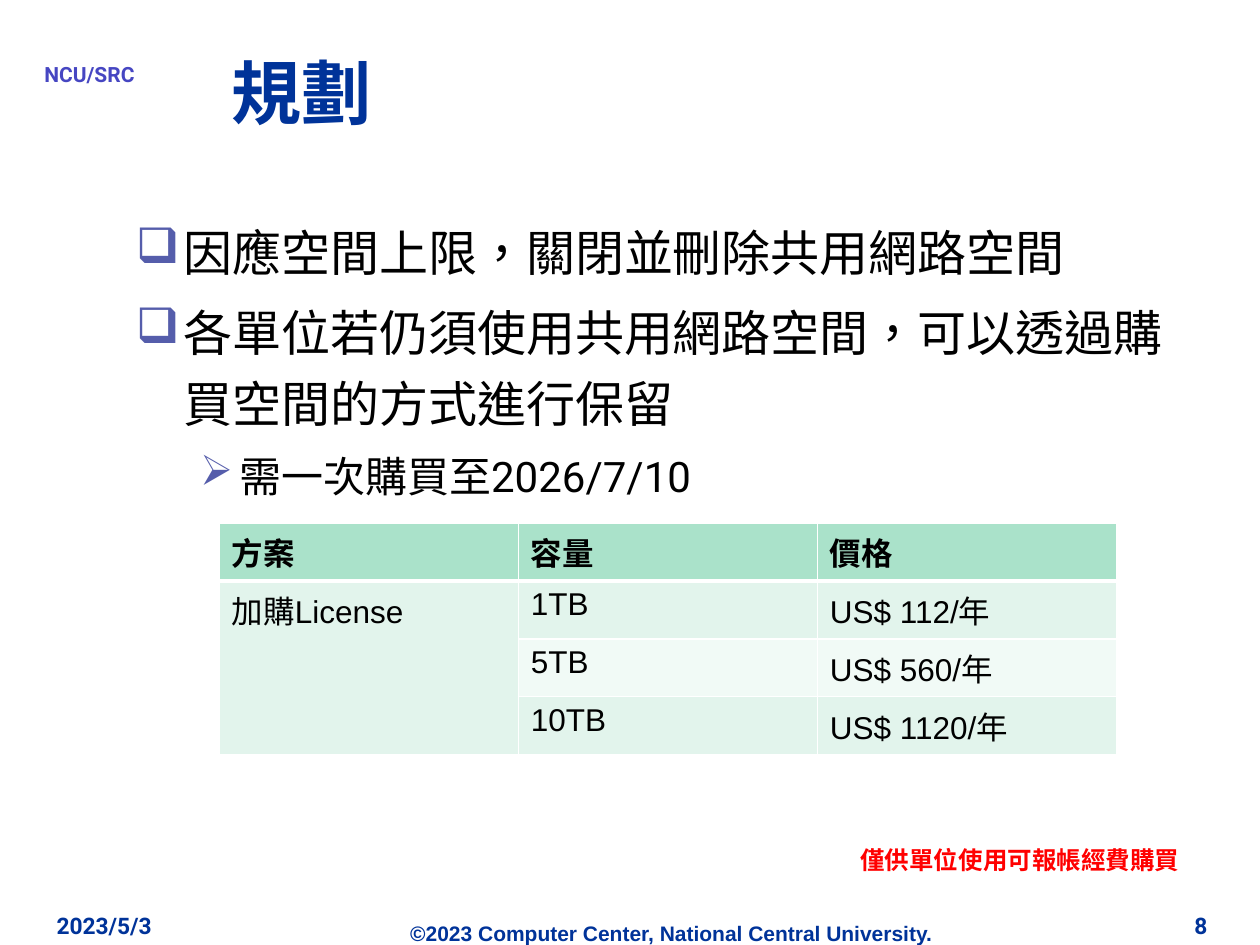
from pptx import Presentation
from pptx.util import Inches, Pt
from pptx.dml.color import RGBColor
from pptx.enum.lang import MSO_LANGUAGE_ID
from pptx.enum.text import MSO_ANCHOR, MSO_AUTO_SIZE, PP_ALIGN
from lxml.etree import Element, SubElement
from pptx.oxml.ns import qn

deck = Presentation()
deck.slide_width, deck.slide_height = Inches(10), Inches(7.5)
slide = deck.slides.add_slide(deck.slide_layouts[6])

# Grid of 100 columns by 75 rows
col, row = deck.slide_width / 100, deck.slide_height / 75
NAVY, BLACK = "003399", "000000"


def grid(x, y, w, h):
    """Turn grid columns and rows into slide lengths."""
    return int(x * col), int(y * row), int(w * col), int(h * row)


def write(para, text, color, **form):
    """Add a run; form holds font attributes such as name, size and bold."""
    run = para.add_run()
    run.text = text
    run.font.color.rgb = RGBColor.from_string(color)
    form["language_id"] = MSO_LANGUAGE_ID.TRADITIONAL_CHINESE
    for key, value in form.items():
        setattr(run.font, key, value)


# Single-line texts: place, text, font, size, colour, alignment, frame format
fit = MSO_AUTO_SIZE.SHAPE_TO_FIT_TEXT
wrap = {"word_wrap": True}
grow = {"word_wrap": True, "auto_size": fit}
tight = {"word_wrap": False, "auto_size": fit,
         "margin_left": 0, "margin_right": 0}
mid = {"word_wrap": True, "vertical_anchor": MSO_ANCHOR.MIDDLE}
left, center, right = PP_ALIGN.LEFT, PP_ALIGN.CENTER, PP_ALIGN.RIGHT
lines = [
    ((17.2, 72.6, 72.2, 3), "©2023 Computer Center, National Central University.",
     "Arial", 12, NAVY, center, grow),
    ((3.5, 4.4, 7.2, 2.4), "NCU/SRC", "Roboto", 12, "4646C2", center, tight),
    ((17.4, 2.8, 82.6, 9), "規劃", "Roboto", 40, NAVY, left, mid),
    ((3.5, 71.9, 20.8, 5), "2023/5/3", "Roboto", 13, NAVY, left, wrap),
    ((76, 71.9, 20.8, 5), "8", "Roboto", 13, NAVY, right, wrap),
    ((67.3, 66.6, 27.6, 3.4), "僅供單位使用可報帳經費購買",
     "Arial", 14, "FF0000", left, grow),
]
for place, text, face, size, color, align, form in lines:
    frame = slide.shapes.add_textbox(*grid(*place)).text_frame
    for key, value in form.items():
        setattr(frame, key, value)
    para = frame.paragraphs[0]
    para.alignment = align
    write(para, text, color, name=face, size=Pt(size), bold=True)

# Bulleted body: level, bullet, left margin, hanging indent, size, text
points = [
    (0, "❑", 0.38, 0.38, 28, "因應空間上限，關閉並刪除共用網路空間"),
    (0, "❑", 0.38, 0.38, 28,
     "各單位若仍須使用共用網路空間，可以透過購買空間的方式進行保留"),
    (1, "➢", 0.82, 0.31, 24, "需一次購買至2026/7/10"),
]
body = slide.shapes.add_textbox(*grid(9.8, 16.2, 85, 50.4)).text_frame
body.word_wrap = True
for n, (level, mark, margin, hang, size, text) in enumerate(points):
    para = body.add_paragraph() if n else body.paragraphs[0]
    props = para._p.get_or_add_pPr()
    props.set("marL", str(Inches(margin)))
    props.set("indent", str(-Inches(hang)))
    tint = SubElement(props, qn("a:buClr"))
    SubElement(tint, qn("a:srgbClr")).set("val", "555DAB")
    SubElement(props, qn("a:buChar")).set("char", mark)
    para.level = level
    para.line_spacing = 1.2
    if n:
        para.space_before = Pt(size * 0.2)
    write(para, text, BLACK, name="Roboto", size=Pt(size))

# Price table; the default style draws its thin white rules
prices = [
    ("方案", "容量", "價格"),
    ("加購License", "1TB", "US$ 112/年"),
    ("", "5TB", "US$ 560/年"),
    ("", "10TB", "US$ 1120/年"),
]
fills = ["AAE2CA", "E2F4EC", "F1FAF6", "E2F4EC"]
table = slide.shapes.add_table(4, 3, *grid(17.4, 41.5, 71.2, 18.4)).table
for r, texts in enumerate(prices):
    for c, text in enumerate(texts):
        cell = table.cell(r, c)
        cell.fill.solid()
        cell.fill.fore_color.rgb = RGBColor.from_string(fills[r])
        if r == 0:
            rule = Element(qn("a:lnB"), w=str(Pt(3)))
            paint = SubElement(rule, qn("a:solidFill"))
            SubElement(paint, qn("a:srgbClr")).set("val", "FFFFFF")
            cell._tc.get_or_add_tcPr().insert(0, rule)
        if text:
            write(cell.text_frame.paragraphs[0], text, BLACK,
                  name="Arial", size=Pt(18), bold=r == 0)
table.cell(1, 0).merge(table.cell(3, 0))

deck.save("out.pptx")
